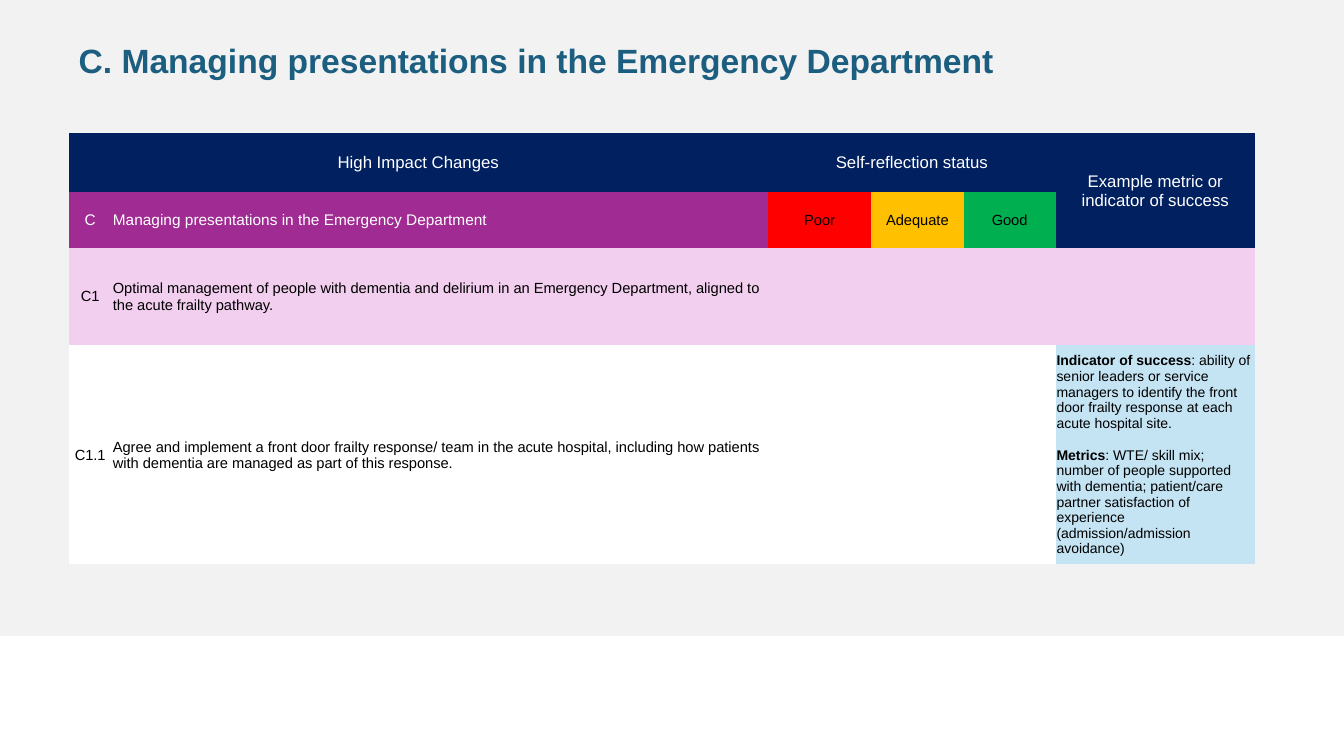
from dataclasses import dataclass

from pptx import Presentation
from pptx import util as u
from pptx.dml.color import RGBColor
from pptx.enum import shapes, text
from pptx.oxml.ns import qn

COLORS = {
    "backdrop": "F2F2F2",
    "title": "1B5E7F",
    "navy": "002060",
    "purple": "A02B93",
    "pink": "F2CEEF",
    "red": "FF0000",
    "amber": "FFC000",
    "green": "00B050",
    "blue": "C4E3F3",
    "white": "FFFFFF",
    "black": "000000",
}
FONT = "Arial"
NO_STYLE = "{2D5ABB26-0587-4C30-8999-92F81FD0307C}"
COLUMN_WIDTHS = [0.43, 6.51, 1.02, 0.92, 0.91, 1.98]
ROW_HEIGHTS = [0.58, 0.56, 0.96, 2.18]
ROW_FILLS = ["navy", "purple", "pink", "white"]
CELL_FORMAT = {
    "margin_left": u.Inches(0.01),
    "margin_right": u.Inches(0.01),
    "margin_top": u.Inches(0.01),
    "margin_bottom": 0,
    "vertical_anchor": text.MSO_ANCHOR.MIDDLE,
}
TITLE_BOX = {
    "left": u.Inches(0.68),
    "top": u.Inches(0.3),
    "width": u.Inches(11.97),
    "height": u.Inches(0.51),
}
TITLE_FORMAT = {
    "vertical_anchor": text.MSO_ANCHOR.TOP,
    "auto_size": text.MSO_AUTO_SIZE.NONE,
    "word_wrap": True,
}


@dataclass
class Entry:
    row: int
    column: int
    wording: str
    size: float = 10.5
    color: str = "black"
    fill: str = ""
    centered: bool = True
    rows: int = 1
    columns: int = 1


@dataclass
class Measure:
    label: str
    detail: str


ENTRIES = [
    Entry(0, 0, "High Impact Changes", 12, "white", columns=2),
    Entry(0, 2, "Self-reflection status", 12, "white", columns=3),
    Entry(0, 5, "Example metric or indicator of success", 12, "white", rows=2),
    Entry(1, 0, "C", 11, "white"),
    Entry(1, 1, "Managing presentations in the Emergency Department", 11, "white", centered=False),
    Entry(1, 2, "Poor", fill="red"),
    Entry(1, 3, "Adequate", fill="amber"),
    Entry(1, 4, "Good", fill="green"),
    Entry(2, 0, "C1"),
    Entry(2, 1, "Optimal management of people with dementia and delirium in an Emergency "
          "Department, aligned to the acute frailty pathway.", centered=False),
    Entry(3, 0, "C1.1"),
    Entry(3, 1, "Agree and implement a front door frailty response/ team in the acute hospital, "
          "including how patients with dementia are managed as part of this response.",
          centered=False),
]
MEASURES = [
    Measure("Indicator of success", ": ability of senior leaders or service managers to identify "
            "the front door frailty response at each acute hospital site."),
    Measure("Metrics", ": WTE/ skill mix; number of people supported with dementia; patient/care "
            "partner satisfaction of experience (admission/admission avoidance)"),
]


def apply_format(target, values: dict) -> None:
    for name, value in values.items():
        setattr(target, name, value)


def paint(target, color: str) -> None:
    target.fill.solid()
    target.fill.fore_color.rgb = RGBColor.from_string(COLORS[color])


def add_run(paragraph, wording: str, size: float, color: str, bold: bool = False) -> None:
    run = paragraph.add_run()
    run.text = wording
    apply_format(run.font, {"name": FONT, "size": u.Pt(size), "bold": bold})
    run.font.color.rgb = RGBColor.from_string(COLORS[color])


def add_title(slide) -> None:
    title = slide.shapes.title
    apply_format(title, TITLE_BOX)
    apply_format(title.text_frame, TITLE_FORMAT)
    paragraph = title.text_frame.paragraphs[0]
    apply_format(paragraph, {"alignment": text.PP_ALIGN.LEFT, "line_spacing": u.Pt(32)})
    add_run(paragraph, "C. Managing presentations in the Emergency Department", 24, "title", True)


def add_backdrop(slide) -> None:
    backdrop = slide.shapes.add_shape(
        shapes.MSO_SHAPE.RECTANGLE, 0, 0, u.Inches(13.33), u.Inches(6.31))
    backdrop.shadow.inherit = False
    paint(backdrop, "backdrop")
    backdrop.line.fill.background()
    slide.shapes.title.element.addprevious(backdrop.element)


def fill_entry(table, entry: Entry) -> None:
    cell = table.cell(entry.row, entry.column)
    if entry.rows * entry.columns > 1:
        cell.merge(table.cell(entry.row + entry.rows - 1, entry.column + entry.columns - 1))
    if entry.fill:
        paint(cell, entry.fill)
    paragraph = cell.text_frame.paragraphs[0]
    paragraph.alignment = text.PP_ALIGN.CENTER if entry.centered else text.PP_ALIGN.LEFT
    add_run(paragraph, entry.wording, entry.size, entry.color)


def fill_measures(cell) -> None:
    paint(cell, "blue")
    frame = cell.text_frame
    for index, measure in enumerate(MEASURES):
        paragraph = frame.add_paragraph() if index else frame.paragraphs[0]
        paragraph.space_before = u.Pt(11.5 if index else 0)
        add_run(paragraph, measure.label, 10, "black", True)
        add_run(paragraph, measure.detail, 10, "black")


def add_change_table(slide) -> None:
    frame = slide.shapes.add_table(
        len(ROW_HEIGHTS), len(COLUMN_WIDTHS), u.Inches(0.68), u.Inches(1.32),
        u.Inches(sum(COLUMN_WIDTHS)), u.Inches(sum(ROW_HEIGHTS)))
    frame.element.find(".//" + qn("a:tableStyleId")).text = NO_STYLE
    table = frame.table
    apply_format(table, {"first_row": False, "horz_banding": False})
    for column, width in zip(table.columns, COLUMN_WIDTHS):
        column.width = u.Inches(width)
    for row, height, fill in zip(table.rows, ROW_HEIGHTS, ROW_FILLS):
        row.height = u.Inches(height)
        for cell in row.cells:
            apply_format(cell, CELL_FORMAT)
            paint(cell, fill)
    for entry in ENTRIES:
        fill_entry(table, entry)
    fill_measures(table.cell(3, 5))


def main() -> None:
    presentation = Presentation()
    presentation.slide_width = u.Inches(13.33)
    presentation.slide_height = u.Inches(7.5)
    slide = presentation.slides.add_slide(presentation.slide_layouts[5])
    add_title(slide)
    add_backdrop(slide)
    add_change_table(slide)
    presentation.save("out.pptx")


if __name__ == "__main__":
    main()
